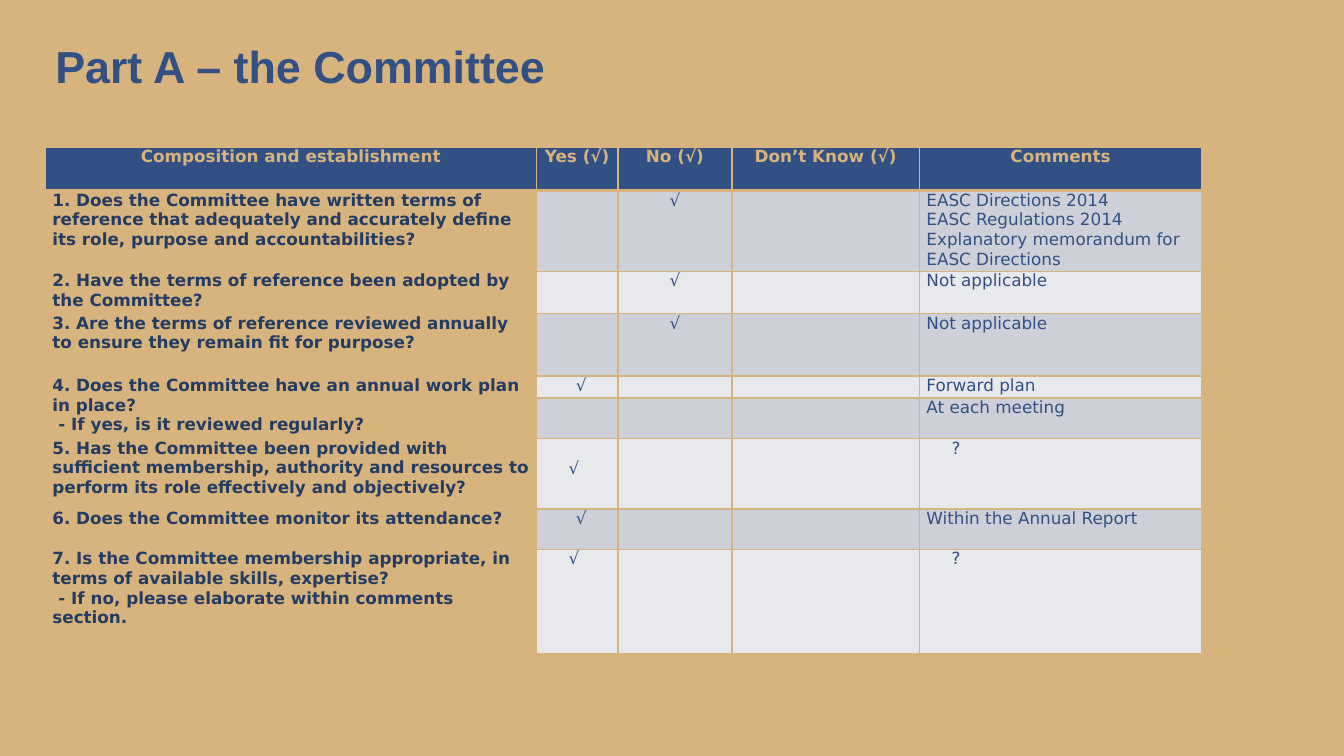
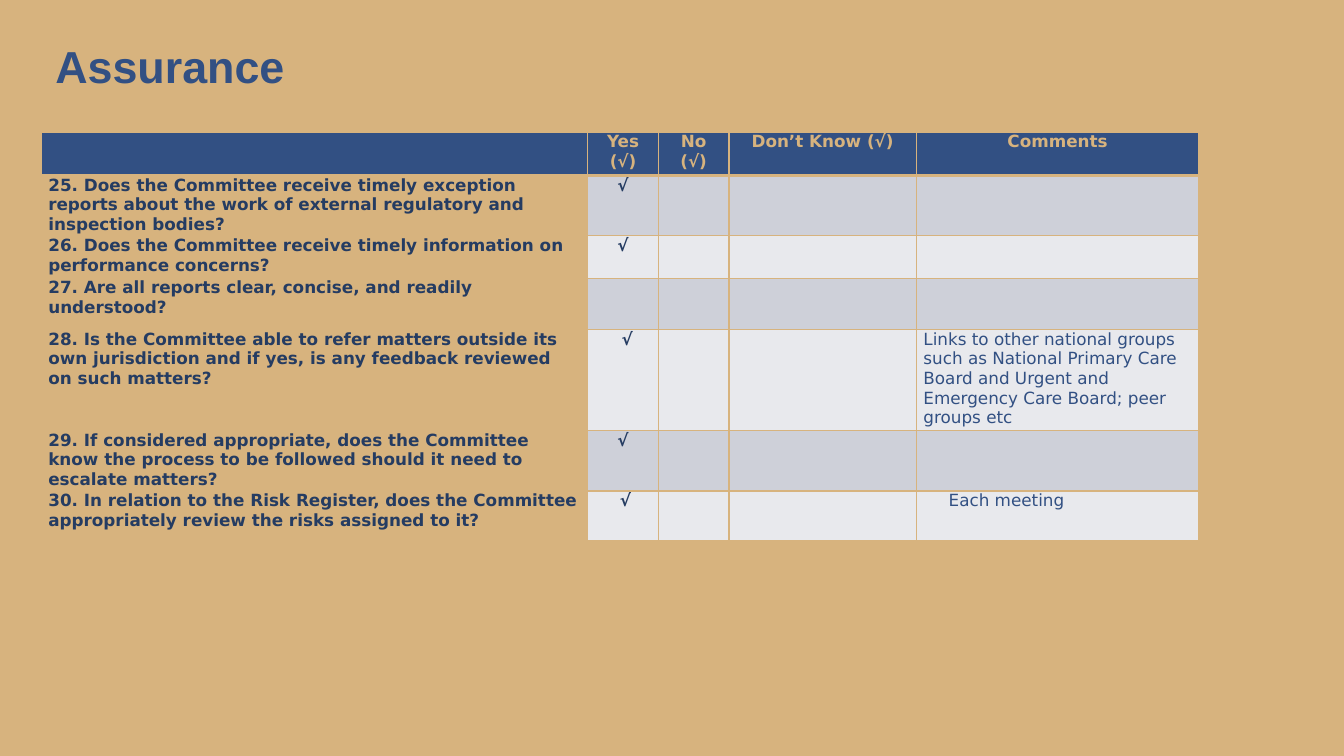
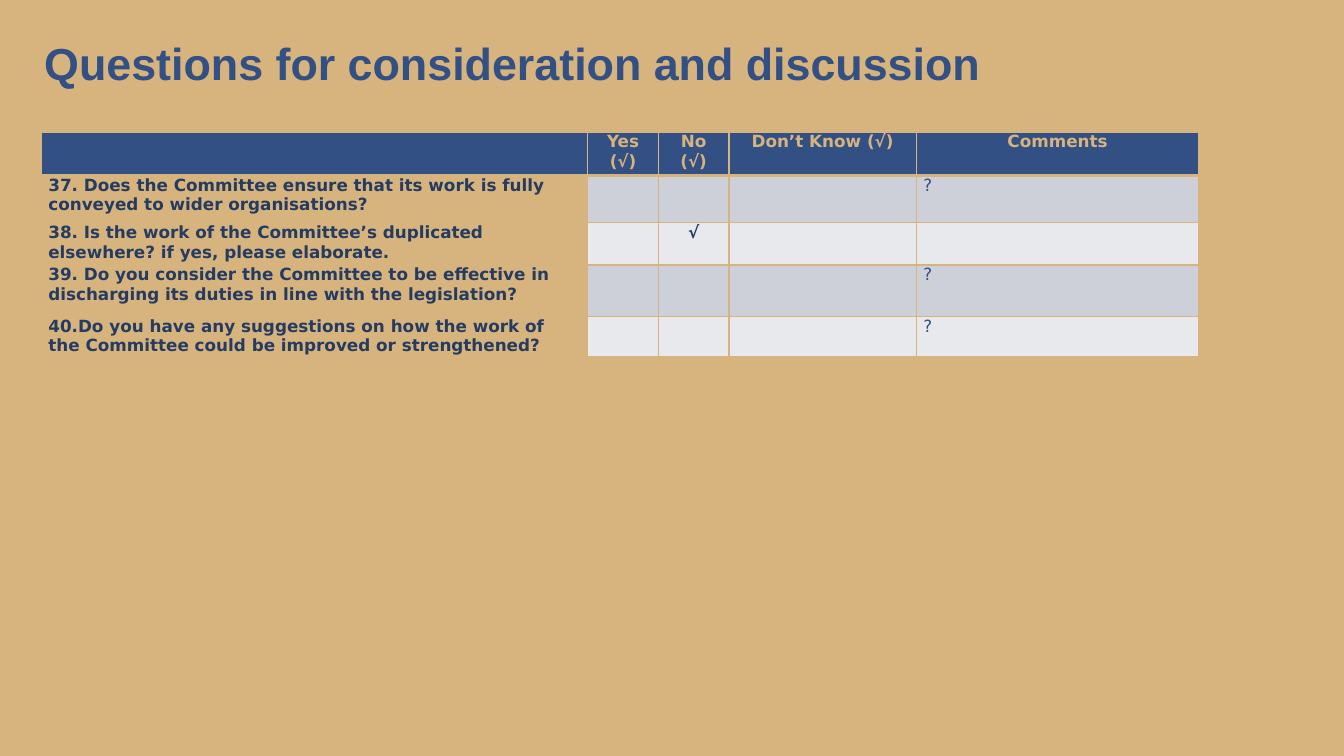
import pptx
import pptx.util
import pptx.dml.color
import pptx.enum.text
import pptx.oxml.ns
from lxml import etree

Inches, Pt = pptx.util.Inches, pptx.util.Pt
RGB = pptx.dml.color.RGBColor.from_string
ALIGN = pptx.enum.text.PP_ALIGN
qn = pptx.oxml.ns.qn

HUES = {"sand": "D7B37E", "blue": "325083", "navy": "253C62",
        "dark": "CED0D9", "light": "E8E9ED"}
HEADS = ["Yes (√)", "No (√)", "Don’t Know (√)", "Comments"]
WIDE = [5.42, 0.7, 0.7, 1.86, 2.8]

# Each row: height, question, then {column: text or (text, indent, top margin)}
PAGES = [
    {"title": "Part A – the Committee", "box": (0.45, 0.22, 11.54),
     "at": (0.45, 1.46), "cols": [4.87, 0.81, 1.13, 1.86, 2.8],
     "head": "Composition and establishment", "bold": False, "hue": "blue",
     "rows": [
         (0.78, "1. Does the Committee have written terms of reference that adequately "
                "and accurately define its role, purpose and accountabilities?",
          {2: "√", 4: "EASC Directions 2014\nEASC Regulations 2014\n"
                      "Explanatory memorandum for EASC Directions"}),
         (0.42, "2. Have the terms of reference been adopted by the Committee?",
          {2: "√", 4: "Not applicable"}),
         (0.62, "3. Are the terms of reference reviewed annually to ensure they "
                "remain fit for purpose?", {2: "√", 4: "Not applicable"}),
         (0.22, "4. Does the Committee have an annual work plan in place?\n"
                "- If yes, is it reviewed regularly?",
          {1: ("√", 0.08, 0), 4: "Forward plan"}),
         (0.4, None, {4: "At each meeting"}),
         (0.7, "5. Has the Committee been provided with sufficient membership, "
               "authority and resources to perform its role effectively and objectively?",
          {1: ("√", 0.25, 0.2), 4: ("?", 0.25, 0)}),
         (0.4, "6. Does the Committee monitor its attendance?",
          {1: ("√", 0.08, 0), 4: "Within the Annual Report"}),
         (1.04, "7. Is the Committee membership appropriate, in terms of available "
                "skills, expertise?\n- If no, please elaborate within comments section.",
          {1: ("√", 0.25, 0), 4: ("?", 0.25, 0)}),
     ]},
    {"title": "Assurance", "box": (0.45, 0.22, 11.42),
     "at": (0.41, 1.31), "cols": WIDE, "head": "", "bold": True, "hue": "navy",
     "rows": [
         (0.59, "25. Does the Committee receive timely exception reports about the "
                "work of external regulatory and inspection bodies?", {1: "√"}),
         (0.42, "26. Does the Committee receive timely information on performance "
                "concerns?", {1: "√"}),
         (0.51, "27. Are all reports clear, concise, and readily understood?", {}),
         (0.98, "28. Is the Committee able to refer matters outside its own "
                "jurisdiction and if yes, is any feedback reviewed on such matters?",
          {1: ("√", 0.08, 0),
           4: "Links to other national groups such as National Primary Care Board "
              "and Urgent and Emergency Care Board; peer groups etc"}),
         (0.59, "29. If considered appropriate, does the Committee know the process "
                "to be followed should it need to escalate matters?", {1: "√"}),
         (0.49, "30. In relation to the Risk Register, does the Committee "
                "appropriately review the risks assigned to it?",
          {1: ("√", 0.25, 0), 4: ("Each meeting", 0.25, 0)}),
     ]},
    {"title": "Questions for consideration and discussion", "box": (0.34, 0.19, 11.56),
     "at": (0.41, 1.31), "cols": WIDE, "head": "", "bold": True, "hue": "navy",
     "rows": [
         (0.47, "37. Does the Committee ensure that its work is fully conveyed to "
                "wider organisations?", {4: "?"}),
         (0.42, "38. Is the work of the Committee’s duplicated elsewhere? if yes, "
                "please elaborate.", {2: "√"}),
         (0.51, "39. Do you consider the Committee to be effective in discharging "
                "its duties in line with the legislation?", {4: "?"}),
         (0.4, "40.Do you have any suggestions on how the work of the Committee "
               "could be improved or strengthened?", {4: "?"}),
     ]},
]


def style(para, size, face, hue, bold):
    for run in para.runs:
        run.font.size, run.font.name, run.font.bold = Pt(size), face, bold
        run.font.color.rgb = RGB(HUES[hue])


def put(cell, item, hue, bold, mid, fill, top, base):
    """Write one cell: text, margins, fill, and borders (top and base in points)."""
    text, inset, drop = item if isinstance(item, tuple) else (item, 0, 0)
    cell.margin_left = cell.margin_right = Inches(0.07)
    cell.margin_top, cell.margin_bottom = Inches(drop), 0
    cell.text_frame.text = text
    for para in cell.text_frame.paragraphs:
        para.alignment = ALIGN.CENTER if mid and inset < 0.25 else ALIGN.LEFT
        props = para._p.get_or_add_pPr()
        if inset:
            props.set("marL", str(Inches(inset)))
            props.set("indent", "0")
        if para.text.startswith("- "):
            props.set("indent", str(Inches(0.06)))
        style(para, 12, "DejaVu Sans", hue, bold)
        if not para.text:
            etree.SubElement(para._p, qn("a:endParaRPr"), sz="1200")
    props = cell._tc.get_or_add_tcPr()
    for side, size in (("L", 1), ("R", 1), ("T", top), ("B", base)):
        line = etree.SubElement(props, qn("a:ln" + side), w=str(Pt(size)))
        solid = etree.SubElement(line, qn("a:solidFill"))
        etree.SubElement(solid, qn("a:srgbClr"), val=HUES["sand"])
    if fill:
        cell.fill.solid()
        cell.fill.fore_color.rgb = RGB(HUES[fill])
    else:
        cell.fill.background()


deck = pptx.Presentation()
deck.slide_width, deck.slide_height = Inches(13.33), Inches(7.5)
ground = deck.slide_master.background.fill
ground.solid()
ground.fore_color.rgb = RGB(HUES["sand"])

for page in PAGES:
    slide = deck.slides.add_slide(deck.slide_layouts[6])

    left, top, width = page["box"]
    box = slide.shapes.add_textbox(Inches(left), Inches(top), Inches(width), Inches(0.8))
    box.fill.solid()
    box.fill.fore_color.rgb = RGB(HUES["sand"])
    frame = box.text_frame
    frame.word_wrap = True
    frame.vertical_anchor = pptx.enum.text.MSO_ANCHOR.MIDDLE
    frame.text = page["title"]
    frame.paragraphs[0].line_spacing = Pt(43)
    style(frame.paragraphs[0], 32, "Arial", "blue", True)

    rows, cols = page["rows"], page["cols"]
    highs = [0.43] + [row[0] for row in rows]
    left, top = page["at"]
    grid = slide.shapes.add_table(len(highs), len(cols), Inches(left), Inches(top),
                                  Inches(sum(cols)), Inches(sum(highs))).table
    for col, width in zip(grid.columns, cols):
        col.width = Inches(width)
    for row, high in zip(grid.rows, highs):
        row.height = Inches(high)

    for c, head in enumerate([page["head"]] + HEADS):
        put(grid.cell(0, c), head, "sand", True, True, "blue", 1, 3)
    for r, (high, ask, marks) in enumerate(rows, 1):
        edge = 3 if r == 1 else 1
        band = "dark" if r % 2 else "light"
        put(grid.cell(r, 0), ask or "", "navy", True, False, None, edge, 1)
        for c in (1, 2, 3):
            put(grid.cell(r, c), marks.get(c, ""), page["hue"], page["bold"],
                True, band, edge, 1)
        put(grid.cell(r, 4), marks.get(4, ""), "blue", False, False, band, edge, 1)
        if ask is None:
            grid.cell(r - 1, 0).merge(grid.cell(r, 0))

deck.save("out.pptx")
